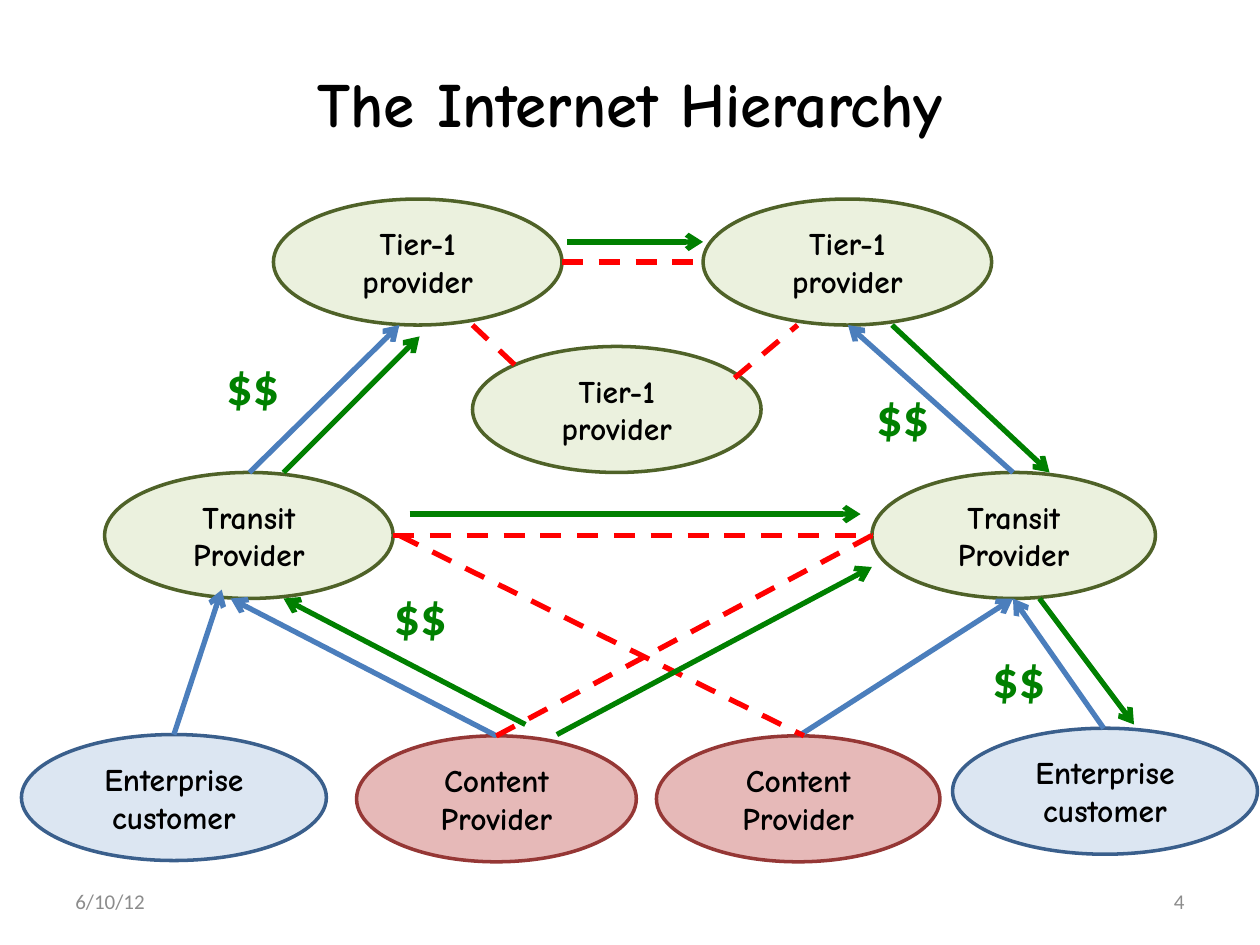
from dataclasses import dataclass

from lxml.etree import SubElement
from pptx import Presentation
from pptx.dml.color import RGBColor
from pptx.enum.dml import MSO_LINE
from pptx.enum.shapes import MSO_CONNECTOR, MSO_SHAPE
from pptx.enum.text import MSO_ANCHOR, PP_ALIGN
from pptx.oxml.ns import qn
from pptx.util import Inches, Pt


@dataclass(frozen=True)
class Theme:
    hand_font: str = "Comic Neue"
    plain_font: str = "Calibri"
    title_size: int = 36
    money_size: int = 30
    node_size: int = 18
    footer_size: int = 12
    outline_width: int = 2
    link_width: int = 3
    ink: str = "000000"
    footer: str = "8C8C8C"
    pays: str = "4B7EBC"
    peers: str = "FF0000"
    traffic: str = "008000"
    # Fill and outline of each kind of network
    provider: tuple = ("EBF1DE", "4F6228")
    enterprise: tuple = ("DCE6F2", "3A5F8C")
    content: tuple = ("E6B9B8", "953735")


def color(value):
    return RGBColor.from_string(value)


class HierarchySlide:
    """Holds the theme and the page that every element is drawn on."""

    def __init__(self, page, theme):
        self.page = page
        self.theme = theme

    def set_text(self, shape, text, size, font, ink, bold=False,
                 align=PP_ALIGN.CENTER, anchor=MSO_ANCHOR.MIDDLE):
        frame = shape.text_frame
        frame.text = text
        frame.word_wrap = True
        frame.vertical_anchor = anchor
        for para in frame.paragraphs:
            para.alignment = align
            for span in para.runs:
                span.font.size = Pt(size)
                span.font.name = font
                span.font.bold = bold
                span.font.color.rgb = color(ink)

    def title(self, text):
        box = self.page.shapes.title
        box.left, box.top = Inches(0.5), Inches(0.33)
        box.width, box.height = Inches(9), Inches(0.97)
        self.set_text(box, text, self.theme.title_size, self.theme.hand_font,
                      self.theme.ink, bold=True)

    def node(self, text, left, top, width, kind):
        oval = self.page.shapes.add_shape(
            MSO_SHAPE.OVAL, Inches(left), Inches(top), Inches(width), Inches(1))
        fill, outline = kind
        oval.shadow.inherit = False
        oval.fill.solid()
        oval.fill.fore_color.rgb = color(fill)
        oval.line.color.rgb = color(outline)
        oval.line.width = Pt(self.theme.outline_width)
        self.set_text(oval, text, self.theme.node_size, self.theme.hand_font,
                      self.theme.ink, bold=True)

    def link(self, start, end, ink):
        """Draw a dashed line between peers and an arrow for all else."""
        link = self.page.shapes.add_connector(
            MSO_CONNECTOR.STRAIGHT, *map(Inches, start + end))
        link.line.color.rgb = color(ink)
        link.line.width = Pt(self.theme.link_width)
        properties = link._element.spPr
        if ink == self.theme.peers:
            link.line.dash_style = MSO_LINE.DASH
        else:
            SubElement(properties.find(qn("a:ln")), qn("a:tailEnd"), type="arrow")
        SubElement(properties, qn("a:effectLst"))

    def money(self, left, top):
        box = self.page.shapes.add_textbox(
            Inches(left), Inches(top), Inches(0.67), Inches(0.61))
        self.set_text(box, "$$", self.theme.money_size, self.theme.plain_font,
                      self.theme.traffic, bold=True, anchor=MSO_ANCHOR.TOP)

    def footer(self, text, left, align):
        box = self.page.shapes.add_textbox(
            Inches(left), Inches(6.95), Inches(2.33), Inches(0.4))
        self.set_text(box, text, self.theme.footer_size, self.theme.plain_font,
                      self.theme.footer, align=align)


def main():
    deck = Presentation()
    deck.slide_width, deck.slide_height = Inches(10), Inches(7.5)
    theme = Theme()
    slide = HierarchySlide(deck.slides.add_slide(deck.slide_layouts[5]), theme)

    slide.title("The Internet Hierarchy")

    nodes = [
        ("Enterprise customer", 0.17, 5.83, 2.42, theme.enterprise),
        ("Enterprise customer", 7.56, 5.78, 2.42, theme.enterprise),
        ("Content Provider", 2.83, 5.84, 2.22, theme.content),
        ("Content Provider", 5.21, 5.84, 2.25, theme.content),
        ("Transit Provider", 0.83, 3.75, 2.29, theme.provider),
        ("Transit Provider", 6.92, 3.75, 2.25, theme.provider),
        ("Tier-1 provider", 2.17, 1.58, 2.29, theme.provider),
        ("Tier-1 provider", 5.58, 1.58, 2.29, theme.provider),
        ("Tier-1 provider", 3.75, 2.75, 2.29, theme.provider),
    ]
    for node in nodes:
        slide.node(*node)

    links = {
        theme.pays: [
            ((1.98, 3.75), (3.17, 2.58)),
            ((8.04, 3.75), (6.73, 2.58)),
            ((1.38, 5.83), (1.76, 4.68)),
            ((8.76, 5.78), (8.04, 4.75)),
            ((3.94, 5.84), (1.83, 4.75)),
            ((6.34, 5.84), (8.04, 4.75)),
        ],
        theme.peers: [
            ((3.12, 4.25), (6.92, 4.25)),
            ((3.17, 4.25), (6.38, 5.84)),
            ((6.92, 4.25), (3.94, 5.84)),
            ((4.46, 2.08), (5.58, 2.08)),
            ((5.83, 3), (6.33, 2.58)),
            ((3.75, 2.58), (4.09, 2.9)),
        ],
        theme.traffic: [
            ((4.17, 5.75), (2.25, 4.75)),
            ((8.25, 4.75), (9, 5.75)),
            ((2.25, 3.75), (3.33, 2.67)),
            ((7.08, 2.58), (8.33, 3.75)),
            ((4.5, 1.92), (5.58, 1.92)),
            ((3.25, 4.08), (6.83, 4.08)),
            ((4.42, 5.83), (6.92, 4.5)),
        ],
    }
    for ink, routes in links.items():
        for start, end in routes:
            slide.link(start, end, ink)

    for left, top in [(1.67, 2.75), (3, 4.58), (6.83, 3), (7.75, 5.08)]:
        slide.money(left, top)

    slide.footer("6/10/12", 0.5, PP_ALIGN.LEFT)
    slide.footer("4", 7.17, PP_ALIGN.RIGHT)

    deck.save("out.pptx")


if __name__ == "__main__":
    main()
